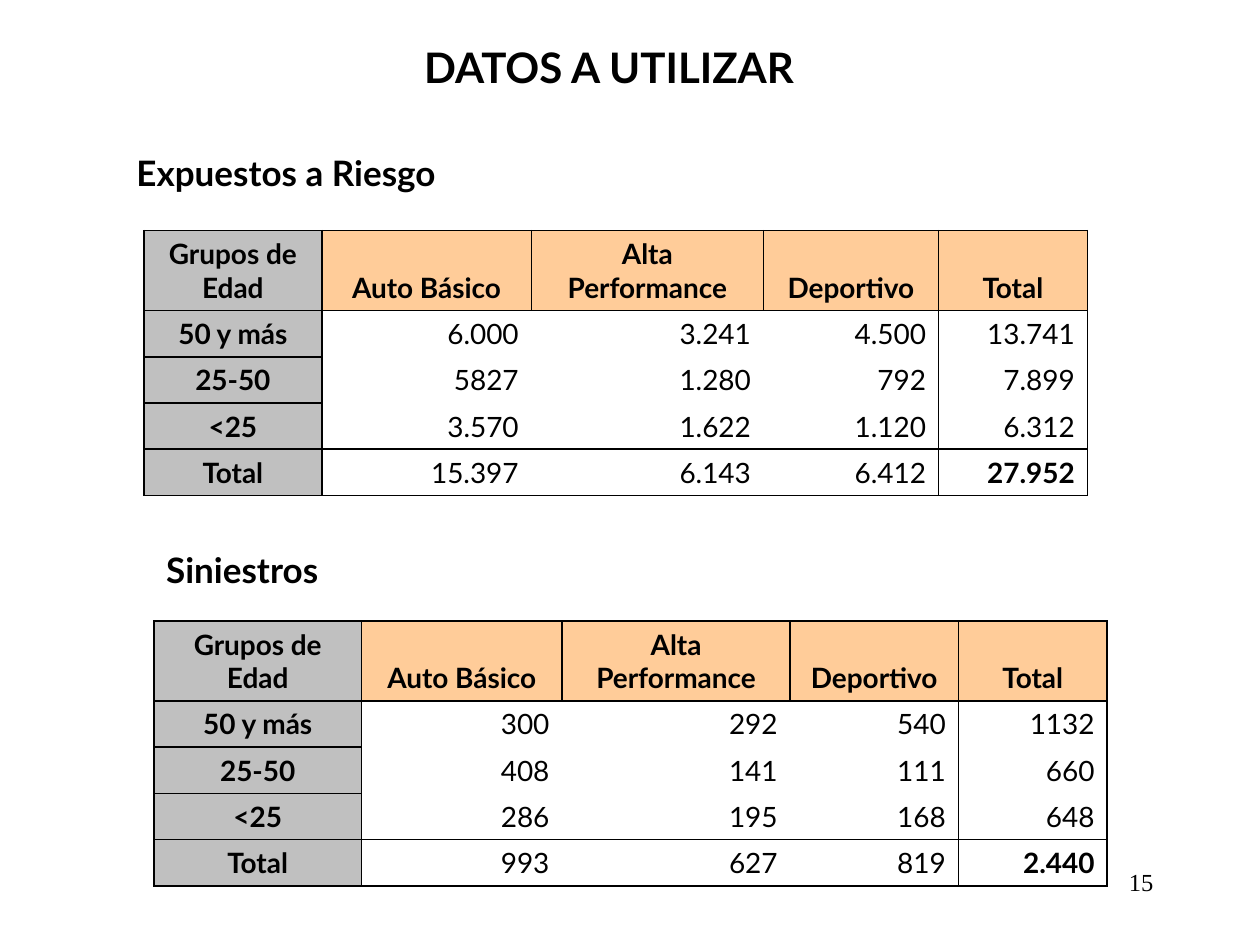
from lxml.etree import SubElement as Sub
from pptx import Presentation
from pptx.dml.color import RGBColor as Rgb
from pptx.enum.text import MSO_ANCHOR as Anchor, PP_ALIGN as Align
from pptx.oxml.ns import qn
from pptx.util import Cm, Pt

HUES = {"ink": "000000", "gray": "C0C0C0", "peach": "FFCC99"}
HEADS = ["Grupos de Edad", "Auto Básico", "Alta Performance", "Deportivo", "Total"]
AGES = ["50 y más", "25-50", "<25", "Total"]


def put_text(frame, text, size=16, bold=False, align=Align.LEFT, font="Lato"):
    para = frame.paragraphs[0]
    para.alignment = align
    run = para.add_run()
    run.text = text
    run.font.size = Pt(size)
    run.font.bold = bold
    run.font.name = font
    run.font.color.rgb = Rgb.from_string(HUES["ink"])


class Deck:
    head_high, row_high = 1.61, 0.93

    def __init__(self, wide, high):
        self.file = Presentation()
        self.file.slide_width, self.file.slide_height = Cm(wide), Cm(high)
        self.slide = self.file.slides.add_slide(self.file.slide_layouts[6])

    def label(self, text, left, top, wide, high, **style):
        box = self.slide.shapes.add_textbox(Cm(left), Cm(top), Cm(wide), Cm(high))
        box.text_frame.word_wrap = True
        put_text(box.text_frame, text, **style)

    def edges(self, cell, drawn):
        props = cell._tc.get_or_add_tcPr()
        for side in "LRTB":
            line = Sub(props, qn("a:ln" + side), w=str(Pt(1)))
            if side in drawn:
                fill = Sub(line, qn("a:solidFill"))
                Sub(fill, qn("a:srgbClr"), val=HUES["ink"])
            else:
                Sub(line, qn("a:noFill"))

    def table(self, left, top, cols, data):
        rows = [HEADS] + [[age] + nums for age, nums in zip(AGES, data)]
        last_row, last_col = len(rows) - 1, len(cols) - 1
        high = self.head_high + last_row * self.row_high
        grid = self.slide.shapes.add_table(
            len(rows), len(cols), Cm(left), Cm(top), Cm(sum(cols)), Cm(high)).table
        for col, wide in zip(grid.columns, cols):
            col.width = Cm(wide)
        for r, row in enumerate(rows):
            grid.rows[r].height = Cm(self.row_high if r else self.head_high)
            for c, text in enumerate(row):
                cell = grid.cell(r, c)
                cell.vertical_anchor = Anchor.BOTTOM
                head = r == 0 or c == 0
                # Body cells are ruled only around the body and the totals
                rules = {"L": c in (1, last_col), "R": c >= last_col - 1,
                         "T": r in (1, last_row), "B": r >= last_row - 1}
                self.edges(cell, [side for side in "LRTB" if head or rules[side]])
                if head:
                    cell.fill.solid()
                    hue = HUES["peach" if c else "gray"]
                    cell.fill.fore_color.rgb = Rgb.from_string(hue)
                else:
                    cell.fill.background()
                put_text(cell.text_frame, text,
                         bold=head or (r, c) == (last_row, last_col),
                         align=Align.CENTER if head else Align.RIGHT)


def main():
    deck = Deck(25.4, 19.05)

    # Title
    deck.label("DATOS A UTILIZAR", 8.3, 0.72, 15.6, 1.27, size=24, bold=True)

    # Exposure
    deck.label("Expuestos a Riesgo", 2.5, 2.93, 10.2, 1.1, size=20, bold=True)
    deck.table(2.9, 4.65, [3.59, 4.22, 4.68, 3.53, 3], [
        ["6.000", "3.241", "4.500", "13.741"],
        ["5827", "1.280", "792", "7.899"],
        ["3.570", "1.622", "1.120", "6.312"],
        ["15.397", "6.143", "6.412", "27.952"],
    ])

    # Claims
    deck.label("Siniestros", 3.1, 10.93, 10.2, 1.1, size=20, bold=True)
    deck.table(3.1, 12.52, [4.19, 4.04, 4.6, 3.39, 3], [
        ["300", "292", "540", "1132"],
        ["408", "141", "111", "660"],
        ["286", "195", "168", "648"],
        ["993", "627", "819", "2.440"],
    ])

    # Page number
    deck.label("15", 18.2, 17.35, 5.3, 1.27, size=14, align=Align.RIGHT,
               font="Times New Roman")

    deck.file.save("out.pptx")


if __name__ == "__main__":
    main()
